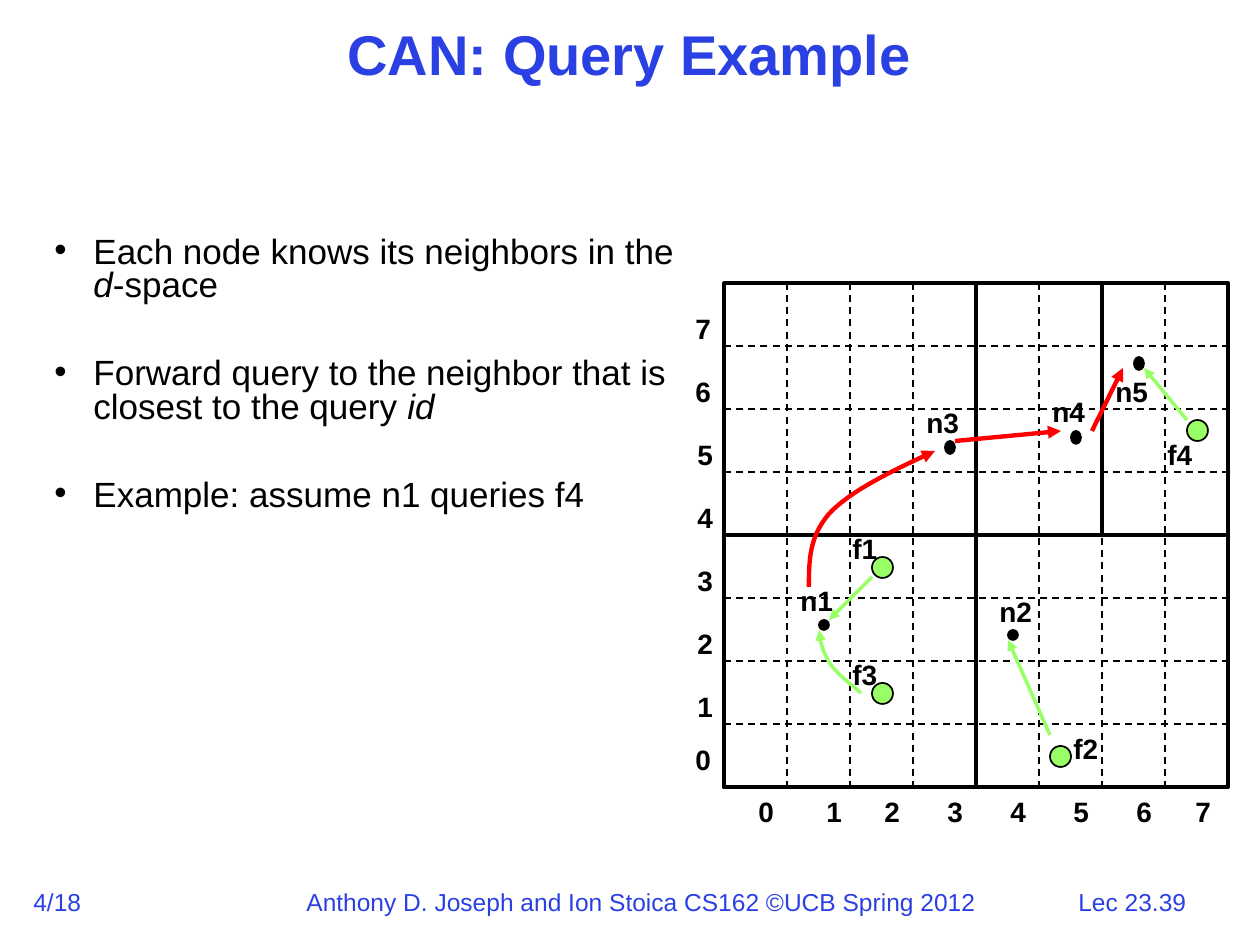
import pptx
import pptx.dml.color
import pptx.enum.dml
import pptx.enum.shapes
import pptx.enum.text
import pptx.oxml
import pptx.oxml.ns
import pptx.util

EMU_PER_PX = 914400 / 126
BLUE, BLACK, GREEN, RED = "2A40E2", "000000", "99FF66", "FF0000"
SHAPE = pptx.enum.shapes.MSO_SHAPE
ALIGN = pptx.enum.text.PP_ALIGN


def px(length):
    return pptx.util.Emu(round(length * EMU_PER_PX))


def color(text):
    return pptx.dml.color.RGBColor.from_string(text)


def element(tag, attributes=""):
    return pptx.oxml.parse_xml(f"<a:{tag} {pptx.oxml.ns.nsdecls('a')} {attributes}/>")


def bezier(start, control1, control2, end, steps=16):
    """Points along a cubic curve, without its start."""
    points = []
    for step in range(1, steps + 1):
        t = step / steps
        weights = ((1 - t) ** 3, 3 * t * (1 - t) ** 2, 3 * t * t * (1 - t), t ** 3)
        corners = (start, control1, control2, end)
        points.append(tuple(sum(w * c[axis] for w, c in zip(weights, corners))
                            for axis in (0, 1)))
    return points


class Sketch:
    font = "Arial"

    def __init__(self, page):
        self.page = page
        self.sites = {}  # middle of a rectangle's side -> (rectangle, side)

    def style_span(self, span, size, fill, bold=False, italic=False):
        span.font.name = self.font
        span.font.size = pptx.util.Pt(size)
        span.font.bold = bold
        span.font.italic = italic
        span.font.color.rgb = color(fill)

    def text(self, x, y, w, h, words, size=16, fill=BLACK, bold=True,
             align=ALIGN.LEFT, wrap=False):
        box = self.page.shapes.add_textbox(px(x), px(y), px(w), px(h))
        frame = box.text_frame
        frame.text = words
        frame.word_wrap = wrap
        para = frame.paragraphs[0]
        para.alignment = align
        self.style_span(para.runs[0], size, fill, bold)
        return box

    def bullets(self, x, y, w, h, items, size=20):
        box = self.page.shapes.add_textbox(px(x), px(y), px(w), px(h))
        frame = box.text_frame
        frame.word_wrap = True
        for number, spans in enumerate(items):
            para = frame.add_paragraph() if number else frame.paragraphs[0]
            para.line_spacing = 0.8
            para.space_before = pptx.util.Pt(31 if number else 2)
            properties = para._p.get_or_add_pPr()
            properties.set("marL", str(px(39)))
            properties.set("indent", str(px(-39)))
            properties.append(element("buFont", f'typeface="{self.font}"'))
            properties.append(element("buChar", 'char="•"'))
            for words, italic in spans:
                span = para.add_run()
                span.text = words
                self.style_span(span, size, BLACK, italic=italic)

    def shape(self, kind, x, y, w, h, fill=None, width=1):
        shape = self.page.shapes.add_shape(kind, px(x), px(y), px(w), px(h))
        shape.shadow.inherit = False
        if fill:
            shape.fill.solid()
            shape.fill.fore_color.rgb = color(fill)
        else:
            shape.fill.background()
        self.stroke(shape, BLACK, width)
        return shape

    def zone(self, x, y, w, h):
        zone = self.shape(SHAPE.RECTANGLE, x, y, w, h, width=2)
        middles = ((x + w / 2, y), (x, y + h / 2), (x + w / 2, y + h), (x + w, y + h / 2))
        for side, middle in enumerate(middles):
            self.sites[middle] = (zone, side)

    def stroke(self, shape, fill, width, arrow=False):
        shape.line.color.rgb = color(fill)
        shape.line.width = pptx.util.Pt(width)
        if arrow:
            shape.line._get_or_add_ln().append(element("tailEnd", 'type="triangle"'))

    def line(self, start, end, fill=BLACK, width=1, arrow=False):
        line = self.page.shapes.add_connector(
            pptx.enum.shapes.MSO_CONNECTOR.STRAIGHT, *map(px, start + end))
        self.stroke(line, fill, width, arrow)
        if not arrow:
            line.line.dash_style = pptx.enum.dml.MSO_LINE.DASH
        line._element.spPr.append(element("effectLst"))
        if start in self.sites:
            line.begin_connect(*self.sites[start])
        if end in self.sites:
            line.end_connect(*self.sites[end])

    def curve(self, start, pieces, fill, width):
        points = [start]
        for piece in pieces:
            points += bezier(points[-1], *piece)
        builder = self.page.shapes.build_freeform(*start, scale=EMU_PER_PX)
        emu_points = [(px(x), px(y)) for x, y in points]
        builder = self.page.shapes.build_freeform(*emu_points[0])
        builder.add_line_segments(emu_points[1:], close=False)
        curve = builder.convert_to_shape()
        curve.shadow.inherit = False
        curve.fill.background()
        self.stroke(curve, fill, width, arrow=True)


def main():
    deck = pptx.Presentation()
    deck.slide_width, deck.slide_height = px(1260), px(945)
    sketch = Sketch(deck.slides.add_slide(deck.slide_layouts[6]))

    # Title and footer
    title = sketch.text(136, 21, 987, 73, "CAN: Query Example", 32, BLUE,
                        align=ALIGN.CENTER, wrap=True)
    title.text_frame.vertical_anchor = pptx.enum.text.MSO_ANCHOR.MIDDLE
    title.text_frame.paragraphs[0].line_spacing = 0.9
    for x, w, words in (
            (21, 73, "4/18"),
            (294, 698, "Anthony D. Joseph and Ion Stoica CS162 ©UCB Spring 2012"),
            (1066, 136, "Lec 23.39")):
        sketch.text(x, 881, w, 42, words, 14, BLUE, bold=False)

    # Bullets
    sketch.bullets(42, 231, 662, 494, (
        (("Each node knows its neighbors in the ", False), ("d", True), ("-space", False)),
        (("Forward query to the neighbor that is closest to the query ", False), ("id", True)),
        (("Example: assume n1 queries f4", False),)))

    # Zones: column, row, width and height in cells
    left, top, cell, count = 724, 283, 63, 8
    for column, row, wide, high in ((0, 0, 8, 8), (0, 4, 4, 4), (4, 4, 4, 4),
                                    (0, 0, 4, 4), (4, 0, 2, 4)):
        sketch.zone(left + column * cell, top + row * cell, wide * cell, high * cell)

    # Dashed grid; the row at the middle is a zone border only
    side = count * cell
    for step in range(1, count):
        x, y = left + step * cell, top + step * cell
        sketch.line((x, top), (x, top + side))
        if step != count // 2:
            sketch.line((left, y), (left + side, y))

    # Axis numbers
    column_lefts = (746, 814, 872, 935, 998, 1061, 1124, 1183)
    row_tops = (736, 683, 620, 557, 494, 431, 368, 305)
    for number, (x, y) in enumerate(zip(column_lefts, row_tops)):
        sketch.text(x, 788, 42, 47, str(number))
        sketch.text(685 if 1 <= number <= 5 else 683, y, 42, 47, str(number))

    # Nodes: dot place, dot height, label place
    for name, x, y, h, label_x, label_y in (
            ("n1", 819, 620, 10, 788, 577), ("n2", 1008, 630, 10, 987, 588),
            ("n3", 945, 441, 13, 914, 399), ("n4", 1071, 431, 13, 1040, 388),
            ("n5", 1134, 357, 13, 1103, 368)):
        sketch.shape(SHAPE.OVAL, x, y, 10, h, BLACK)
        sketch.text(label_x, label_y, 58, 47, name)

    # Files: circle place, label place
    for name, x, y, label_x, label_y in (
            ("f1", 872, 557, 840, 525), ("f2", 1050, 746, 1061, 725),
            ("f3", 872, 683, 840, 651), ("f4", 1187, 420, 1155, 431)):
        sketch.shape(SHAPE.OVAL, x, y, 21, 21, GREEN)
        sketch.text(label_x, label_y, 50, 47, name)

    # Each file points to the node that stores it
    sketch.curve((861, 693), (((848, 682), (835, 672), (829, 662)),
                              ((822, 650), (820, 640), (819, 630))), GREEN, 2)
    for start, end in (((872, 577), (829, 620)), ((1050, 735), (1008, 640)),
                       ((1187, 420), (1144, 368))):
        sketch.line(start, end, GREEN, 2, arrow=True)

    # Query route from n1 to n5
    sketch.curve((809, 587), (((809, 562), (809, 537), (829, 514)),
                              ((850, 491), (892, 471), (935, 451))), RED, 2.5)
    for start, end in (((955, 441), (1061, 431)), ((1092, 431), (1123, 368))):
        sketch.line(start, end, RED, 2.5, arrow=True)

    deck.save("out.pptx")


if __name__ == "__main__":
    main()
